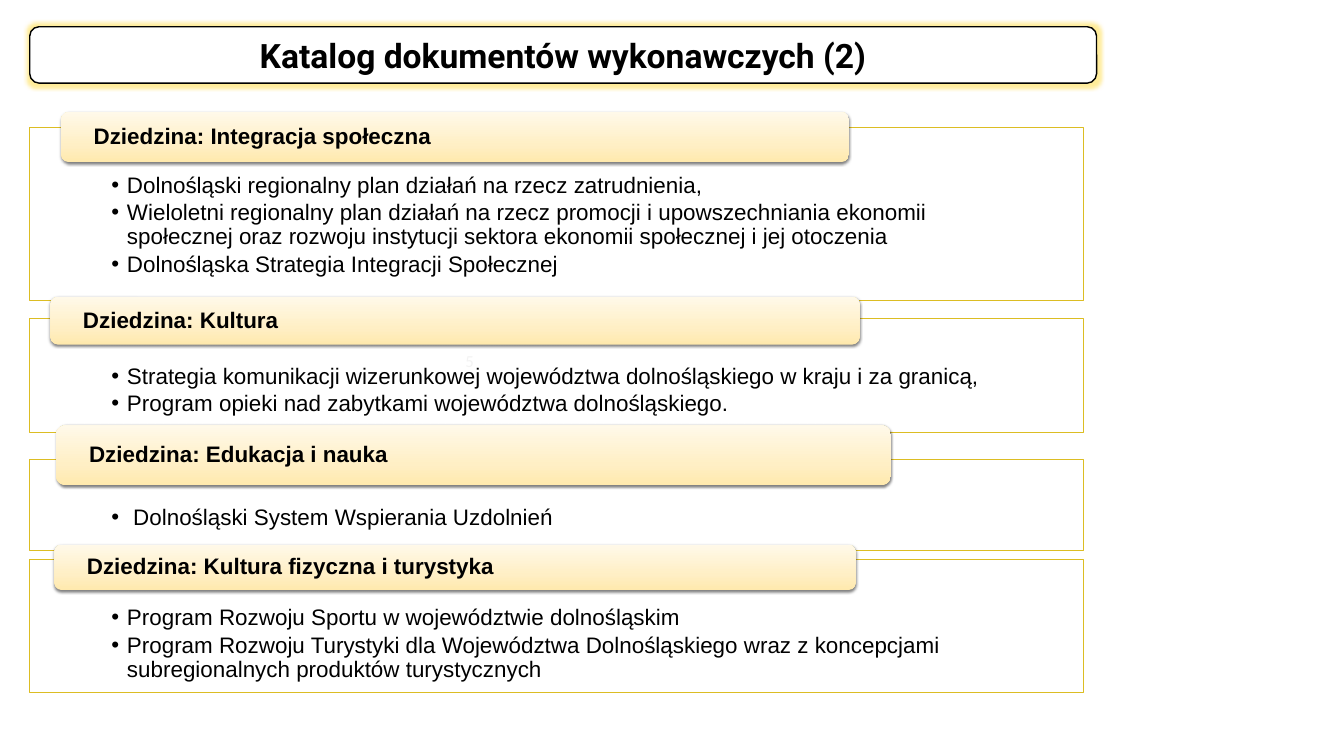
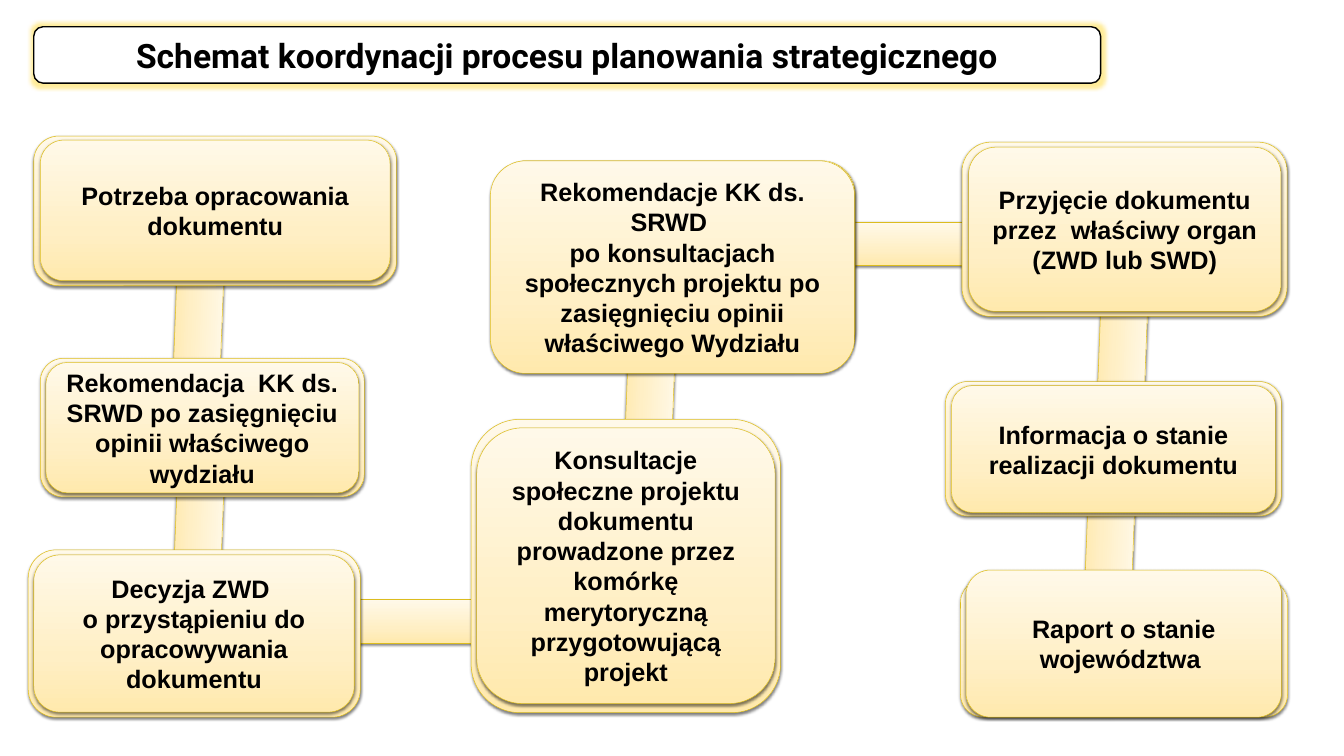
from lxml import etree
from pptx import Presentation
from pptx.dml.color import RGBColor
from pptx.enum.shapes import MSO_SHAPE
from pptx.enum.text import MSO_ANCHOR, PP_ALIGN
from pptx.oxml.ns import qn
from pptx.util import Inches, Pt

RECTANGLE, ROUNDED = MSO_SHAPE.RECTANGLE, MSO_SHAPE.ROUNDED_RECTANGLE
TOP, MIDDLE = MSO_ANCHOR.TOP, MSO_ANCHOR.MIDDLE
LEFT, CENTER, RIGHT = PP_ALIGN.LEFT, PP_ALIGN.CENTER, PP_ALIGN.RIGHT

BLACK = RGBColor(0x00, 0x00, 0x00)
WHITE = RGBColor(0xFF, 0xFF, 0xFF)
GREY = RGBColor(0x88, 0x88, 0x88)
GLOW = RGBColor(0xFF, 0xD0, 0x00)
GOLD_LINE = RGBColor(0xDC, 0xBC, 0x1E)
PANEL_LINE = RGBColor(0xDC, 0xBD, 0x23)
GOLD_STOPS = (
    (0, RGBColor(0xFF, 0xE9, 0xAD)),
    (35, RGBColor(0xFF, 0xEF, 0xC5)),
    (100, RGBColor(0xFF, 0xF9, 0xE9)),
)

PANEL_LEFT, PANEL_WIDTH = 0.59, 20.91
LINK_LENGTH, LINK_THICKNESS, LINK_TILT = 3.06, 0.93, 92.2

FIELDS = [
    (2.52, 3.44, (1.21, 2.22, 15.64, 1), "Dziedzina: Integracja społeczna", [
        "Dolnośląski regionalny plan działań na rzecz zatrudnienia,",
        "Wieloletni regionalny plan działań na rzecz promocji i upowszechniania ekonomii "
        "społecznej oraz rozwoju instytucji sektora ekonomii społecznej i jej otoczenia",
        "Dolnośląska Strategia Integracji Społecznej",
    ]),
    (6.31, 2.27, (1, 5.89, 16.06, 0.95), "Dziedzina: Kultura", [
        "Strategia komunikacji wizerunkowej województwa dolnośląskiego w kraju i za granicą,",
        "Program opieki nad zabytkami województwa dolnośląskiego.",
    ]),
    (9.11, 1.81, (1.11, 8.44, 16.57, 1.19), "Dziedzina: Edukacja i nauka", [
        " Dolnośląski System Wspierania Uzdolnień",
    ]),
    (11.1, 2.64, (1.08, 10.81, 15.9, 0.9), "Dziedzina: Kultura fizyczna i turystyka", [
        "Program Rozwoju Sportu w województwie dolnośląskim",
        "Program Rozwoju Turystyki dla Województwa Dolnośląskiego wraz z koncepcjami "
        "subregionalnych produktów turystycznych",
    ]),
]

FLAT_LINKS = [(15.02, 4.41, 5.79, 0.86), (4.97, 11.9, 5.79, 0.86)]
TILTED_LINKS = [(11.37, 7.36), (20.51, 9.89), (20.75, 6.35), (2.4, 10.45), (2.4, 6.19)]

STEPS = [
    ((0.67, 2.7, 7.2, 2.97), (0.8, 2.78, 6.94, 2.79), 0.07,
     ["Potrzeba opracowania dokumentu"]),
    ((0.8, 7.11, 6.43, 2.75), (0.91, 7.19, 6.21, 2.59), 0.07,
     ["Rekomendacja  KK ds. SRWD po zasięgnięciu opinii właściwego wydziału"]),
    ((0.56, 10.91, 6.59, 3.32), (0.67, 11.01, 6.36, 3.12), 0.07,
     ["Decyzja ZWD \no przystąpieniu do opracowywania dokumentu"]),
    ((19.06, 11.5, 6.49, 2.73), (19.17, 11.31, 6.26, 2.92), 0.07,
     ["Raport o stanie województwa "]),
    ((9.35, 8.32, 6.14, 5.82), (9.46, 8.49, 5.92, 5.47), 0,
     ["Konsultacje społeczne projektu dokumentu prowadzone przez komórkę "
      "merytoryczną przygotowującą projekt"]),
    ((9.78, 3.19, 7.19, 4.02), (9.73, 3.19, 7.23, 4.22), 0.07,
     ["Rekomendacje KK ds. SRWD ",
      "po konsultacjach społecznych projektu po zasięgnięciu opinii właściwego Wydziału"]),
    ((19.09, 2.82, 6.45, 3.46), (19.22, 2.92, 6.2, 3.26), 0.07,
     ["Przyjęcie dokumentu przez  właściwy organ (ZWD lub SWD)"]),
    ((18.76, 7.57, 6.67, 2.67), (18.88, 7.65, 6.43, 2.52), 0.07,
     ["Informacja o stanie realizacji dokumentu"]),
]


def add_element(parent, tag, **attributes):
    """Append a DrawingML element with the given attributes."""
    texts = {name: str(value) for name, value in attributes.items()}
    return etree.SubElement(parent, qn(tag), texts)


def add_color(parent, color, opacity=100):
    """Append a colour, with its opacity in percent."""
    element = add_element(parent, "a:srgbClr", val=color)
    if opacity < 100:
        add_element(element, "a:alpha", val=opacity * 1000)


class Deck:
    """Draws the elements of the deck on the current slide."""

    def __init__(self):
        """Open a presentation of the right size."""
        self.presentation = Presentation()
        self.presentation.slide_width = Inches(26.67)
        self.presentation.slide_height = Inches(15)
        self.slide = None

    def start_slide(self):
        """Add a blank slide and make it current."""
        self.slide = self.presentation.slides.add_slide(self.presentation.slide_layouts[6])

    def shape(self, kind, box, line=None, line_width=0.75):
        """Add a shape without effects and with the given outline."""
        shape = self.slide.shapes.add_shape(kind, *map(Inches, box))
        shape.shadow.inherit = False
        if line is None:
            shape.line.fill.background()
        else:
            shape.line.color.rgb = line
            shape.line.width = Pt(line_width)
        return shape

    def gold(self, kind, box, line=GOLD_LINE):
        """Add a shape with the gold gradient and a soft shadow."""
        shape = self.shape(kind, box, line)
        shape.fill.gradient()
        shape.fill.gradient_angle = 90
        properties = shape._element.spPr
        stops = properties.find(".//" + qn("a:gsLst"))
        stops.clear()
        for position, color in GOLD_STOPS:
            add_color(add_element(stops, "a:gs", pos=position * 1000), color)
        shadow = add_element(properties.find(qn("a:effectLst")), "a:outerShdw",
                             blurRad=Pt(4), dist=Pt(2), dir=5400000, rotWithShape=0)
        add_color(shadow, BLACK, 50)
        return shape

    def add_text(self, shape, texts, size, font="Arial", color=BLACK, bold=True, align=CENTER,
                 anchor=MIDDLE, insets=(0.1, 0.05, 0.1, 0.05), spacing=None, bullets=False):
        """Fill a shape with one paragraph per text."""
        frame = shape.text_frame
        frame.word_wrap = True
        frame.vertical_anchor = anchor
        (frame.margin_left, frame.margin_top,
         frame.margin_right, frame.margin_bottom) = map(Inches, insets)
        for index, text in enumerate(texts):
            paragraph = frame.add_paragraph() if index else frame.paragraphs[0]
            paragraph.alignment = align
            if bullets:
                self.bullet(paragraph)
            if spacing:
                paragraph.line_spacing = spacing
            for number, part in enumerate(text.split("\n")):
                if number:
                    paragraph.add_line_break()
                run = paragraph.add_run()
                run.text = part
                run.font.name = font
                run.font.size = Pt(size)
                run.font.bold = bold
                run.font.color.rgb = color

    def bullet(self, paragraph):
        """Give a paragraph a hanging bullet."""
        paragraph.level = 1
        properties = paragraph._p.get_or_add_pPr()
        properties.set("marL", str(Inches(0.31)))
        properties.set("indent", str(Inches(-0.31)))
        add_element(properties, "a:buFont", typeface="Arial")
        add_element(properties, "a:buChar", char="•")
        paragraph.space_after = Pt(4.8)

    def title(self, text, left):
        """Add the glowing title band."""
        shape = self.shape(ROUNDED, (left, 0.53, 21.17, 1.12), BLACK, 2)
        shape.fill.solid()
        shape.fill.fore_color.rgb = WHITE
        effects = shape._element.spPr.find(qn("a:effectLst"))
        add_color(add_element(effects, "a:glow", rad=Pt(11)), GLOW, 40)
        self.add_text(shape, [text], 48, font="Roboto")

    def page_number(self, text):
        """Add the page number."""
        box = self.slide.shapes.add_textbox(*map(Inches, (7.17, 6.95, 2.33, 0.4)))
        self.add_text(box, [text], 24, font="Calibri", color=GREY, bold=False,
                      align=RIGHT, insets=(0.1,) * 4)

    def field(self, top, height, header_box, header, documents):
        """Add a framed list of documents with its header."""
        panel = self.shape(RECTANGLE, (PANEL_LEFT, top, PANEL_WIDTH, height), PANEL_LINE)
        panel.fill.solid()
        panel.fill.fore_color.rgb = WHITE
        color = panel._element.spPr.find(qn("a:solidFill")).find(qn("a:srgbClr"))
        add_element(color, "a:alpha", val=90000)
        self.add_text(panel, documents, 32, bold=False, align=LEFT, anchor=TOP,
                      insets=(1.62, 0.93, 1.62, 0.25), spacing=0.9, bullets=True)
        self.add_text(self.gold(ROUNDED, header_box, None), [header], 32, align=LEFT,
                      insets=(0.6, 0, 0.6, 0), spacing=0.9)

    def link(self, box, rotation=0):
        """Add a gold bar that joins two steps."""
        self.gold(RECTANGLE, box).rotation = rotation

    def step(self, outer, inner, side_inset, texts):
        """Add a double-edged step of the process."""
        self.gold(ROUNDED, outer)
        self.add_text(self.gold(ROUNDED, inner), texts, 36,
                      insets=(side_inset, 0.07, side_inset, 0.07))


def main():
    """Build both slides and save them."""
    deck = Deck()

    deck.start_slide()
    deck.title("Katalog dokumentów wykonawczych (2)", 0.59)
    deck.page_number("5")
    for field in FIELDS:
        deck.field(*field)

    deck.start_slide()
    for box in FLAT_LINKS:
        deck.link(box)
    for left, top in TILTED_LINKS:
        deck.link((left, top, LINK_LENGTH, LINK_THICKNESS), LINK_TILT)
    deck.title("Schemat koordynacji procesu planowania strategicznego", 0.67)
    for step in STEPS:
        deck.step(*step)

    deck.presentation.save("out.pptx")


if __name__ == "__main__":
    main()
